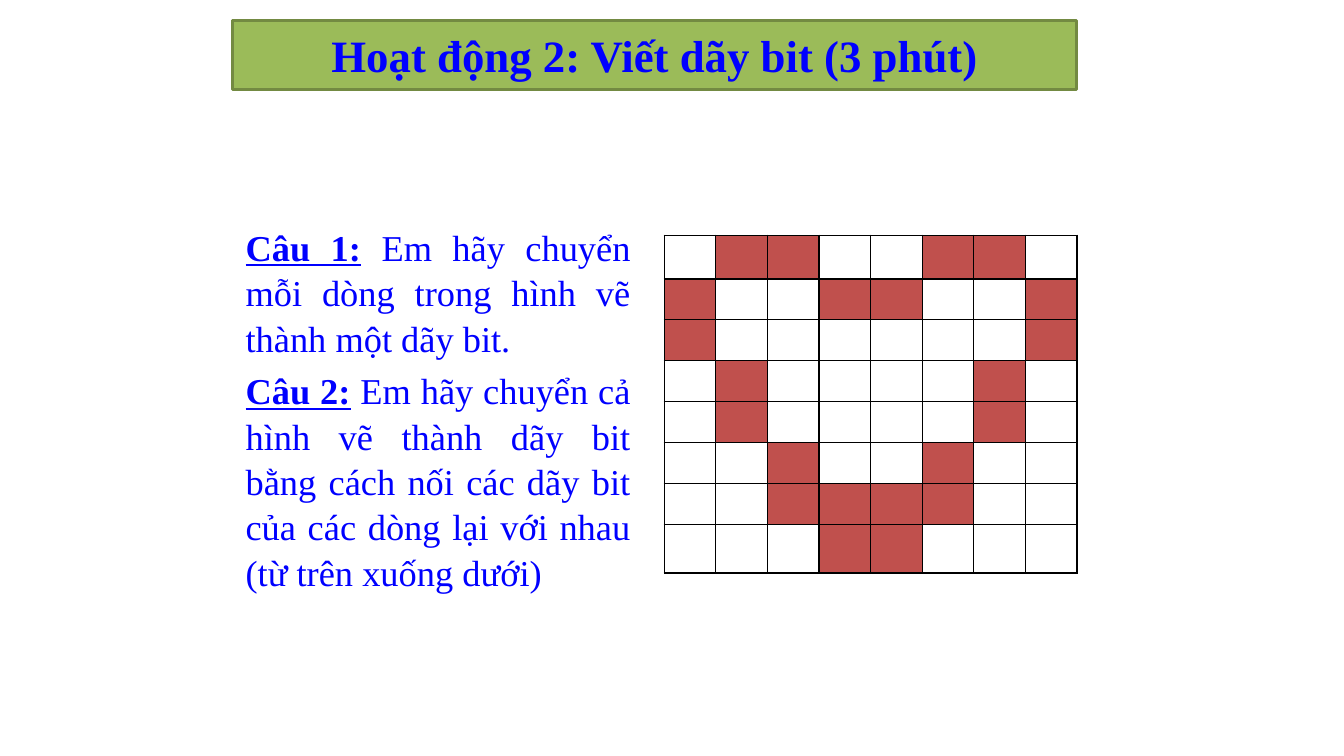
from pptx import Presentation
from pptx.dml.color import RGBColor
from pptx.enum import shapes, text
from pptx.oxml.ns import qn
from pptx.util import Cm, Pt
from lxml import etree

BLUE = RGBColor(0x00, 0x00, 0xFF)
GREEN = RGBColor(0x9B, 0xBB, 0x59)
DARK_GREEN = RGBColor(0x73, 0x8A, 0x42)
RED = RGBColor(0xC0, 0x50, 0x4D)
WHITE = RGBColor(0xFF, 0xFF, 0xFF)
BLACK = RGBColor(0x00, 0x00, 0x00)
FONT = "Times New Roman"

QUESTIONS = [
    ("Câu 1:", " Em hãy chuyển mỗi dòng trong hình vẽ thành một dãy bit."),
    ("Câu 2:", " Em hãy chuyển cả hình vẽ thành dãy bit bằng cách nối các dãy bit "
               "của các dòng lại với nhau (từ trên xuống dưới)"),
]
HEART = [
    "01100110",
    "10011001",
    "10000001",
    "01000010",
    "01000010",
    "00100100",
    "00111100",
    "00011000",
]
ROW_HEIGHTS = [1.1] + [1.03] * 6 + [1.23]


def style_font(font, size):
    font.name = FONT
    font.size = Pt(size)
    font.color.rgb = BLUE


def add_title(slide, title):
    banner = slide.shapes.add_shape(
        shapes.MSO_SHAPE.RECTANGLE, Cm(5.87), Cm(0.51), Cm(21.26), Cm(1.75))
    banner.shadow.inherit = False
    banner.fill.solid()
    banner.fill.fore_color.rgb = GREEN
    banner.line.color.rgb = DARK_GREEN
    banner.line.width = Pt(2)
    banner.text_frame.vertical_anchor = text.MSO_ANCHOR.MIDDLE
    paragraph = banner.text_frame.paragraphs[0]
    paragraph.text = title
    paragraph.alignment = text.PP_ALIGN.CENTER
    style_font(paragraph.font, 32)
    paragraph.font.bold = True


def add_questions(slide, questions):
    box = slide.shapes.add_textbox(Cm(5.94), Cm(5.5), Cm(10.21), Cm(8.2))
    frame = box.text_frame
    frame.word_wrap = True
    for index, (label, question) in enumerate(questions):
        paragraph = frame.add_paragraph() if index else frame.paragraphs[0]
        paragraph.alignment = text.PP_ALIGN.JUSTIFY
        paragraph.line_spacing = 1.04
        paragraph.space_before = Pt(5.2 if index else 0)
        style_font(paragraph.font, 26)
        label_run = paragraph.add_run()
        label_run.text = label
        label_run.font.bold = True
        label_run.font.underline = True
        paragraph.add_run().text = question


def add_borders(cell):
    """Draw a thin black line on all four sides of a cell."""
    properties = cell._tc.get_or_add_tcPr()
    for index, side in enumerate(("a:lnL", "a:lnR", "a:lnT", "a:lnB")):
        line = etree.Element(qn(side), w=str(Pt(1)))
        fill = etree.SubElement(line, qn("a:solidFill"))
        etree.SubElement(fill, qn("a:srgbClr"), val=str(BLACK))
        properties.insert(index, line)


def add_bitmap(slide, bitmap):
    """Add a table with one cell per bit, red where the bit is 1."""
    column_count = len(bitmap[0])
    table = slide.shapes.add_table(
        len(bitmap), column_count, Cm(16.74), Cm(5.93),
        Cm(1.3 * column_count), Cm(sum(ROW_HEIGHTS))).table
    for row, height in zip(table.rows, ROW_HEIGHTS):
        row.height = Cm(height)
    for row, bits in zip(table.rows, bitmap):
        for cell, bit in zip(row.cells, bits):
            cell.fill.solid()
            cell.fill.fore_color.rgb = RED if bit == "1" else WHITE
            add_borders(cell)


def main():
    presentation = Presentation()
    presentation.slide_width = Cm(33.87)
    presentation.slide_height = Cm(19.05)
    slide = presentation.slides.add_slide(presentation.slide_layouts[6])
    add_questions(slide, QUESTIONS)
    add_title(slide, "Hoạt động 2: Viết dãy bit (3 phút)")
    add_bitmap(slide, HEART)
    presentation.save("out.pptx")


if __name__ == "__main__":
    main()
